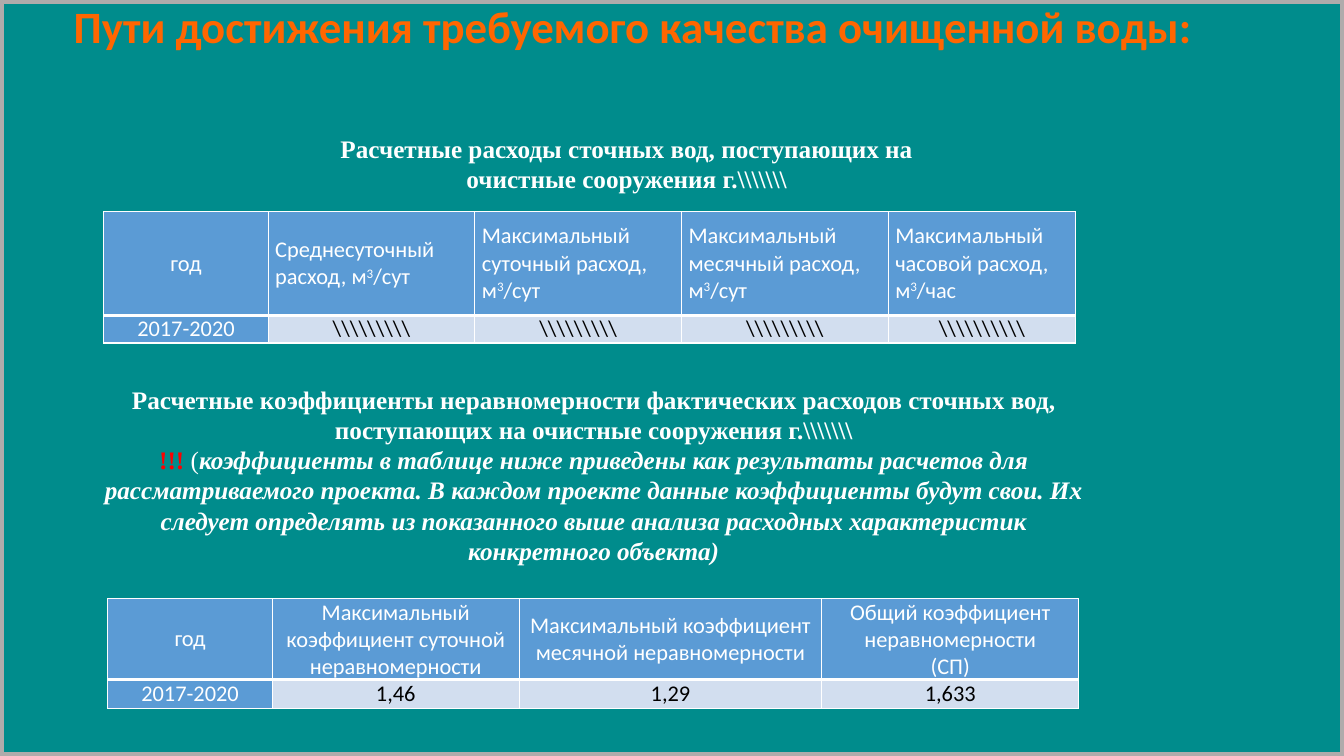
from lxml import etree
from pptx import Presentation
from pptx import util as u
from pptx.dml.color import RGBColor
from pptx.enum import shapes, text
from pptx.oxml.ns import qn

PX = 9144  # one px is a hundredth of an inch

TEAL = RGBColor(0x00, 0x8C, 0x8C)
GREY = RGBColor(0xAF, 0xAB, 0xAB)
ORANGE = RGBColor(0xFF, 0x66, 0x00)
WHITE = RGBColor(0xFF, 0xFF, 0xFF)
BLACK = RGBColor(0x00, 0x00, 0x00)
RED = RGBColor(0xFF, 0x00, 0x00)
BLUE = RGBColor(0x5B, 0x9B, 0xD5)
PALE_BLUE = RGBColor(0xD2, 0xDE, 0xEF)

SANS = "Calibri"
SERIF = "Times New Roman"
CENTER = text.PP_ALIGN.CENTER
LEFT = text.PP_ALIGN.LEFT
BLANK = "\\"  # mark that stands for a value left open


def px(*lengths):
    return [u.Emu(length * PX) for length in lengths]


def style(span, font, size, color, bold=False, italic=False):
    span.font.name = font
    span.font.size = u.Pt(size)
    span.font.color.rgb = color
    span.font.bold = bold
    span.font.italic = italic


def add_frame(page, width, height):
    frame = page.shapes.add_shape(shapes.MSO_SHAPE.RECTANGLE, 0, 0, width, height)
    frame.shadow.inherit = False
    frame.fill.solid()
    frame.fill.fore_color.rgb = TEAL
    frame.line.color.rgb = GREY
    frame.line.width = u.Pt(6)
    # Send the frame behind the title
    page.shapes._spTree.insert(2, frame._element)


def set_title(page, words):
    title = page.shapes.title
    title.left, title.top, title.width, title.height = px(0, 0, 1256, 112)
    frame = title.text_frame
    frame.text = words
    frame.word_wrap = True
    frame.auto_size = text.MSO_AUTO_SIZE.NONE
    frame.vertical_anchor = text.MSO_ANCHOR.TOP
    para = frame.paragraphs[0]
    para.alignment = CENTER
    para.line_spacing = 0.9
    para.space_before = u.Pt(10)
    style(para.runs[0], SANS, 32, ORANGE, bold=True)


def add_caption(page, place, paragraphs):
    """Each paragraph is a list of (words, color, bold, italic)."""
    frame = page.shapes.add_textbox(*px(*place)).text_frame
    frame.word_wrap = True
    for index, spans in enumerate(paragraphs):
        para = frame.add_paragraph() if index else frame.paragraphs[0]
        para.alignment = CENTER
        for words, color, bold, italic in spans:
            span = para.add_run()
            span.text = words
            style(span, SERIF, 18, color, bold, italic)


def set_borders(cell, bottom):
    properties = cell._tc.get_or_add_tcPr()
    for side, points in (("L", 1), ("R", 1), ("T", 1), ("B", bottom)):
        line = etree.SubElement(properties, qn("a:ln" + side), w=str(u.Pt(points)))
        fill = etree.SubElement(line, qn("a:solidFill"))
        etree.SubElement(fill, qn("a:srgbClr"), val=str(WHITE))


def fill_cell(cell, words, fill, color, align, bottom):
    """Line breaks start paragraphs; words between carets are superscript."""
    set_borders(cell, bottom)
    cell.fill.solid()
    cell.fill.fore_color.rgb = fill
    cell.vertical_anchor = text.MSO_ANCHOR.MIDDLE
    cell.margin_left, cell.margin_right, cell.margin_top, cell.margin_bottom = px(7, 7, 0, 0)
    for index, line in enumerate(words.split("\n")):
        para = cell.text_frame.add_paragraph() if index else cell.text_frame.paragraphs[0]
        para.alignment = align
        for position, piece in enumerate(line.split("^")):
            span = para.add_run()
            span.text = piece
            style(span, SANS, 16, color)
            if position % 2:
                span.font._element.set("baseline", "30000")


def add_grid(page, left, top, widths, heights, rows, header_align):
    place = px(left, top, sum(widths), sum(heights))
    grid = page.shapes.add_table(len(rows), len(widths), *place).table
    for column, width in zip(grid.columns, px(*widths)):
        column.width = width
    for row, height in zip(grid.rows, px(*heights)):
        row.height = height
    for r, row in enumerate(rows):
        for c, words in enumerate(row):
            accent = r == 0 or c == 0
            fill_cell(
                grid.cell(r, c), words,
                fill=BLUE if accent else PALE_BLUE,
                color=WHITE if accent else BLACK,
                align=header_align if r == 0 and c else CENTER,
                bottom=1 if r else 3,
            )


def main():
    deck = Presentation()
    deck.slide_width, deck.slide_height = px(1333, 750)
    page = deck.slides.add_slide(deck.slide_layouts[5])

    # Background and title
    add_frame(page, deck.slide_width, deck.slide_height)
    set_title(page, "Пути достижения требуемого качества очищенной воды:")

    # Design flows
    add_grid(page, 103, 210, [163, 205, 205, 205, 186], [103, 27], [
        ["год",
         "Среднесуточный расход, м^3^/сут",
         "Максимальный суточный расход, м^3^/сут",
         "Максимальный месячный расход, м^3^/сут",
         "Максимальный часовой расход, м^3^/час"],
        ["2017-2020", BLANK * 9, BLANK * 9, BLANK * 9, BLANK * 10],
    ], LEFT)
    add_caption(page, (288, 127, 667, 71), [
        [("Расчетные расходы сточных вод, поступающих на очистные сооружения г."
          + BLANK * 7, WHITE, True, False)],
    ])

    # Irregularity coefficients
    add_caption(page, (76, 376, 1026, 192), [
        [("Расчетные коэффициенты неравномерности фактических расходов сточных вод, "
          "поступающих на очистные сооружения г." + BLANK * 7, WHITE, True, False)],
        [("!!! ", RED, True, False),
         ("(", WHITE, False, False),
         ("коэффициенты в таблице ниже приведены как результаты расчетов для "
          "рассматриваемого проекта. В каждом проекте данные коэффициенты будут свои. "
          "Их следует определять из показанного выше анализа расходных характеристик "
          "конкретного объекта)", WHITE, True, True)],
    ])
    add_grid(page, 107, 594, [163, 245, 300, 255], [80, 29], [
        ["год",
         "Максимальный коэффициент суточной неравномерности",
         "Максимальный коэффициент месячной неравномерности",
         "Общий коэффициент неравномерности\n(СП)"],
        ["2017-2020", "1,46", "1,29", "1,633"],
    ], CENTER)

    deck.save("out.pptx")


if __name__ == "__main__":
    main()
